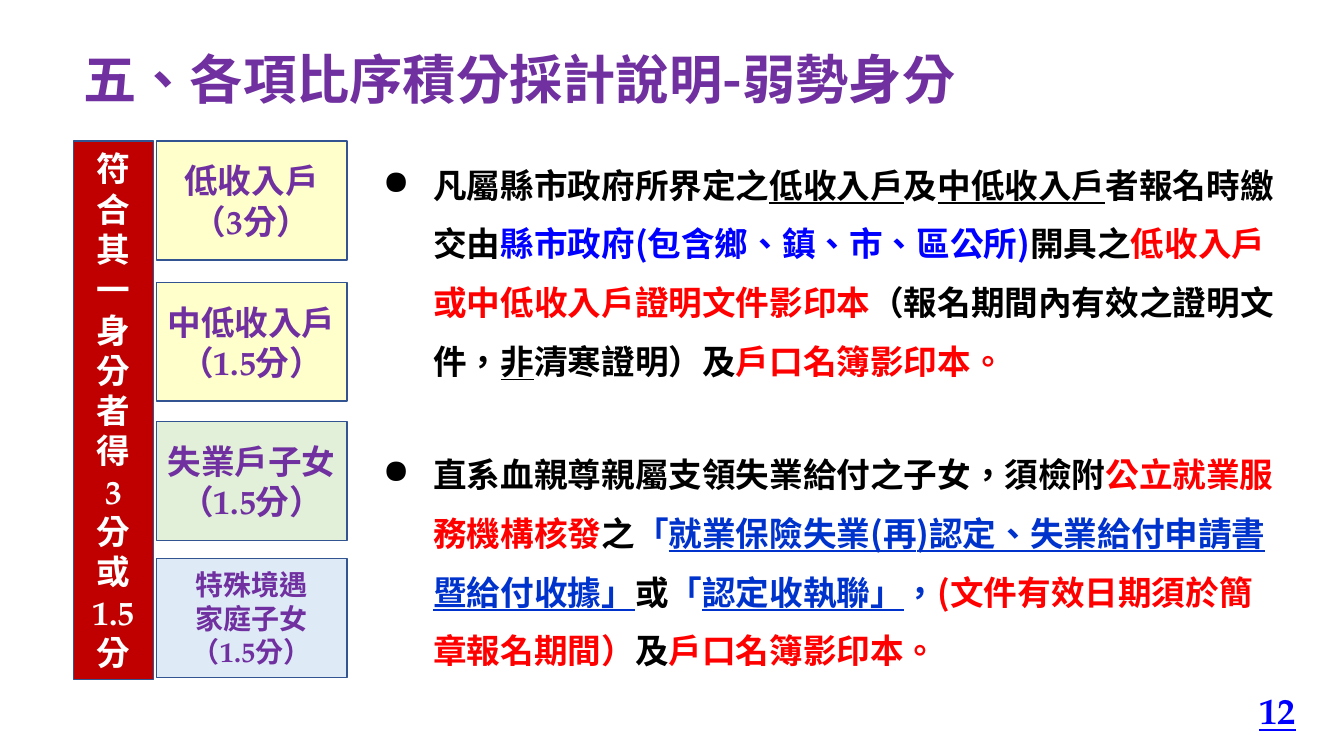
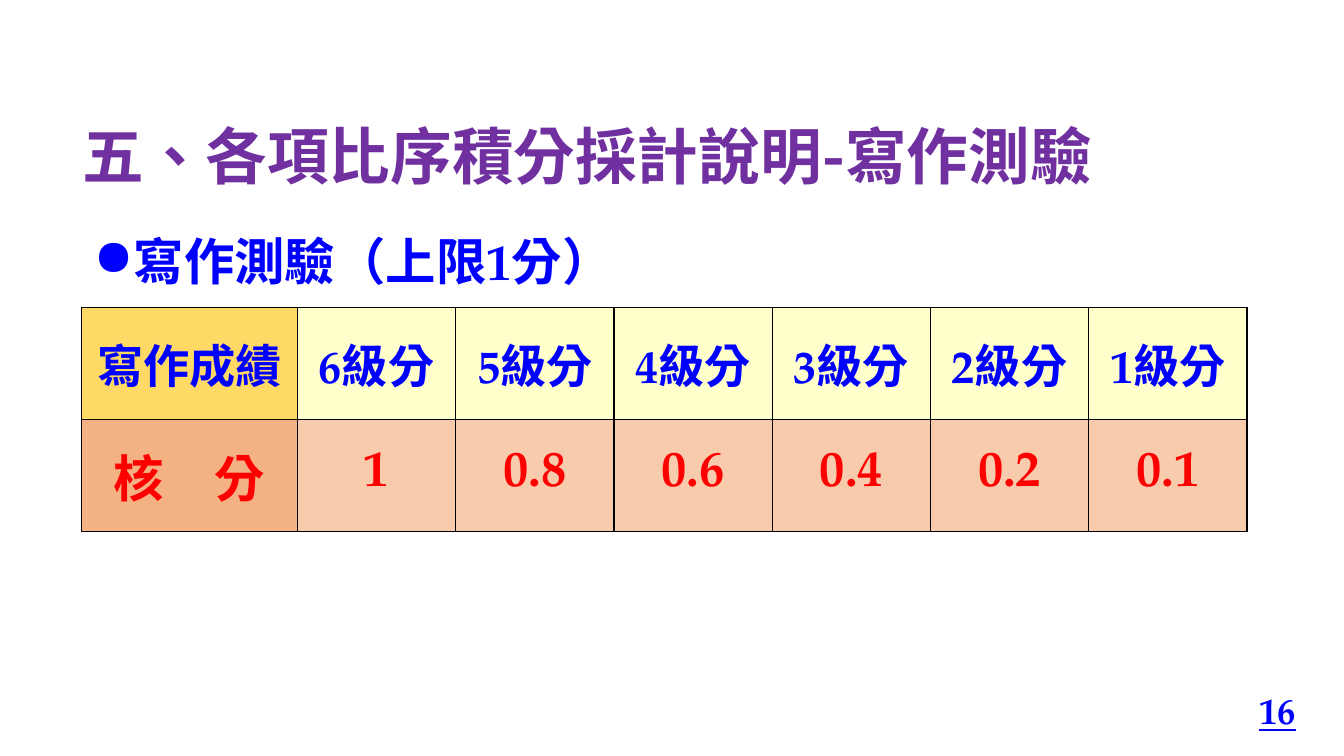
from lxml import etree
from pptx import Presentation
from pptx import util as u
from pptx.dml.color import RGBColor
from pptx.enum import lang, shapes, text
from pptx.oxml import ns

Inches, Pt = u.Inches, u.Pt
hex_color = RGBColor.from_string
SANS, SERIF = "Noto Sans CJK SC", "TeX Gyre Pagella"
PURPLE, BLUE, LINK_BLUE = "7030A0", "0000FF", "0033CC"
RED, BLACK, WHITE, OUTLINE = "FF0000", "000000", "FFFFFF", "325491"
LEFT, CENTER, RIGHT = text.PP_ALIGN.LEFT, text.PP_ALIGN.CENTER, text.PP_ALIGN.RIGHT
TOP, MIDDLE = text.MSO_ANCHOR.TOP, text.MSO_ANCHOR.MIDDLE


def write(frame, lines, size, color, face, align=LEFT, anchor=MIDDLE,
          spacing=None, hang=None, underline=None):
    frame.word_wrap = True
    frame.vertical_anchor = anchor
    for number, line in enumerate(lines):
        paragraph = frame.add_paragraph() if number else frame.paragraphs[0]
        paragraph.alignment = align
        paragraph.line_spacing = spacing
        properties = paragraph._p.get_or_add_pPr()
        if hang:
            properties.set("marL", str(Inches(hang)))
            properties.set("indent", str(-Inches(hang)))
            etree.SubElement(properties, ns.qn("a:buChar")).set("char", "●")
        font = paragraph.font
        font.size, font.bold, font.name = Pt(size), True, face
        font.underline = underline
        font.color.rgb = hex_color(color)
        font.language_id = lang.MSO_LANGUAGE_ID.TRADITIONAL_CHINESE
        east_asian = etree.SubElement(properties.find(ns.qn("a:defRPr")), ns.qn("a:ea"))
        east_asian.set("typeface", SANS)
        for words, *look in [(line,)] if isinstance(line, str) else line:
            run = paragraph.add_run()
            run.text = words
            for setting in look:
                if setting == "underline":
                    run.font.underline = True
                elif setting in (SANS, SERIF):
                    run.font.name = setting
                else:
                    run.font.color.rgb = hex_color(setting)


def add_box(slide, left, top, width, height, fill=None):
    place = [Inches(length) for length in (left, top, width, height)]
    if not fill:
        return slide.shapes.add_textbox(*place).text_frame
    box = slide.shapes.add_shape(shapes.MSO_SHAPE.RECTANGLE, *place)
    box.shadow.inherit = False
    box.fill.solid()
    box.fill.fore_color.rgb = hex_color(fill)
    box.line.color.rgb = hex_color(OUTLINE)
    box.line.width = Pt(1)
    return box.text_frame


deck = Presentation()
deck.slide_width, deck.slide_height = Inches(13.33), Inches(7.5)
pages = [
    ("弱勢身分", "12", 38, (0.73, 0.27, 11.5, 1.1)),
    ("寫作測驗", "16", 44, (0.72, 0.86, 11.5, 1.45)),
]
for topic, page_number, title_size, title_place in pages:
    slide = deck.slides.add_slide(deck.slide_layouts[6])
    write(add_box(slide, 9.95, 6.84, 3, 0.4), [page_number], 26, BLUE, SERIF,
          RIGHT, underline=True)
    write(add_box(slide, *title_place), [f"五、各項比序積分採計說明-{topic}"],
          title_size, PURPLE, SANS, spacing=0.9)
status_slide, writing_slide = deck.slides

write(add_box(status_slide, 0.73, 1.4, 0.79, 5.34, "C00000"),
      ["符合其一身分者得", "3", "分", "或", "1.5", "分"], 24, WHITE, SERIF, CENTER)

statuses = [
    (1.4, "FFFFCC", 24, ["低收入戶", "（3分）"]),
    (2.8, "FFFFCC", 24, ["中低收入戶", "（1.5分）"]),
    (4.18, "E2F0D9", 24, ["失業戶子女", "（1.5分）"]),
    (5.54, "DEEBF7", 20, ["特殊境遇", "家庭子女", "（1.5分）"]),
]
for top, fill, size, lines in statuses:
    write(add_box(status_slide, 1.55, top, 1.89, 1.18, fill), lines, size,
          PURPLE, SERIF, CENTER)

low_income_rule = [
    ("凡屬縣市政府所界定之",),
    ("低收入戶", "underline"),
    ("及",),
    ("中低收入戶", "underline"),
    ("者報名時繳交由",),
    ("縣市政府(包含鄉、鎮、市、區公所)", BLUE),
    ("開具之",),
    ("低收入戶或中低收入戶證明文件影印本", RED),
    ("（報名期間內有效之證明文件，",),
    ("非", "underline"),
    ("清寒證明）及",),
    ("戶口名簿影印本。", RED),
]
unemployment_rule = [
    ("直系血親尊親屬支領失業給付之子女，須檢附",),
    ("公立就業服務機構核發", RED),
    ("之",),
    ("「", LINK_BLUE),
    ("就業保險失業(再)認定、失業給付申請書暨給付收據」", LINK_BLUE, "underline"),
    ("或",),
    ("「", LINK_BLUE),
    ("認定收執聯」", LINK_BLUE, "underline"),
    ("，", LINK_BLUE),
    ("(文件有效日期須於簡章報名期間）", RED),
    ("及",),
    ("戶口名簿影印本。", RED),
]
for top, rule in [(1.4, low_income_rule), (4.27, unemployment_rule)]:
    write(add_box(status_slide, 3.7, top, 9.05, 2.46), [rule], 24, BLACK, SANS,
          anchor=TOP, spacing=Pt(42), hang=0.5)

write(add_box(writing_slide, 0.83, 2.23, 11.5, 1.05),
      [[("寫作測驗（上限",), ("1", SERIF), ("分）",)]], 36, BLUE, SANS,
      anchor=TOP, hang=0.25)

score_rows = [
    (33, BLUE, "FFD966", "FFFFCC",
     ["寫作成績"] + [f"{level}級分" for level in range(6, 0, -1)]),
    (36, RED, "F4B183", "F8CBAD",
     ["核　分", "1", "0.8", "0.6", "0.4", "0.2", "0.1"]),
]
scores = writing_slide.shapes.add_table(
    2, 7, Inches(0.81), Inches(3.05), Inches(11.58), Inches(2.22)).table
scores.first_row = scores.horz_banding = False
for number, column in enumerate(scores.columns):
    column.width = Inches(1.57 if number else 2.14)
for row, (size, color, head_fill, fill, values) in enumerate(score_rows):
    scores.rows[row].height = Inches(1.11)
    for column, value in enumerate(values):
        cell = scores.cell(row, column)
        cell.vertical_anchor = MIDDLE
        write(cell.text_frame, [value], size, color,
              SANS if value == "寫作成績" else SERIF, CENTER)
        borders = cell._tc.get_or_add_tcPr()
        for side in ("lnL", "lnR", "lnT", "lnB"):
            border = etree.SubElement(borders, ns.qn(f"a:{side}"), w=str(Pt(1)))
            paint = etree.SubElement(border, ns.qn("a:solidFill"))
            etree.SubElement(paint, ns.qn("a:srgbClr"), val=BLACK)
        cell.fill.solid()
        cell.fill.fore_color.rgb = hex_color(fill if column else head_fill)

deck.save("out.pptx")
